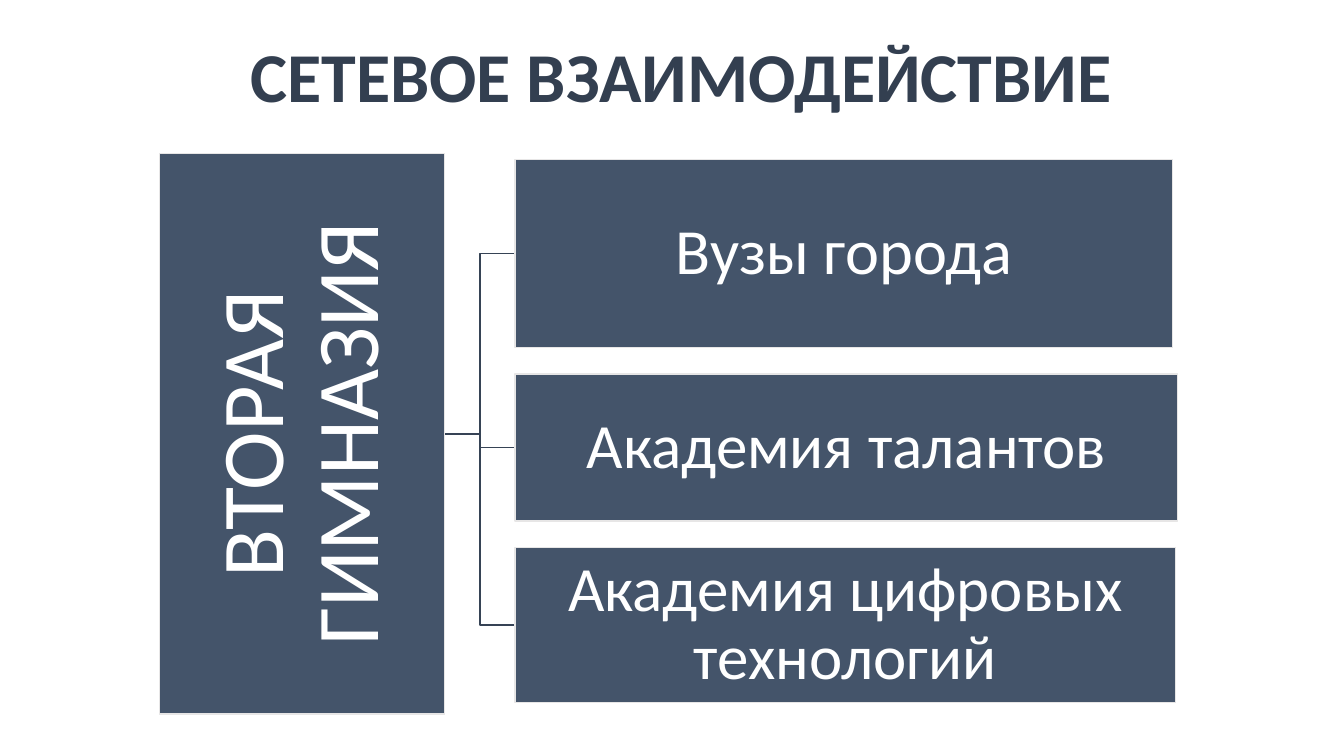
from pptx import Presentation
from pptx.dml.color import RGBColor
from pptx.enum.shapes import MSO_SHAPE
from pptx.enum.text import MSO_ANCHOR, PP_ALIGN
from pptx.util import Inches, Pt

COLORS = {
    "block": "44546A",
    "border": "E7E6E6",
    "branch": "364355",
    "title": "333F50",
    "label": "FFFFFF",
}

deck = Presentation()
deck.slide_width = Inches(13.33)
deck.slide_height = Inches(7.5)
column = deck.slide_width / 100
row = deck.slide_height / 100
slide = deck.slides.add_slide(deck.slide_layouts[5])


def write(holder, text, size, color, bold=False, inset=0.03):
    frame = holder.text_frame
    frame.word_wrap = True
    frame.vertical_anchor = MSO_ANCHOR.MIDDLE
    frame.margin_left = frame.margin_right = Inches(inset)
    frame.margin_top = frame.margin_bottom = Inches(inset)
    paragraph = frame.paragraphs[0]
    paragraph.alignment = PP_ALIGN.CENTER
    paragraph.line_spacing = 0.9
    run = paragraph.add_run()
    run.text = text
    run.font.name = "Calibri"
    run.font.size = Pt(size)
    run.font.bold = bold
    run.font.color.rgb = RGBColor.from_string(COLORS[color])


def add_block(left, top, width, height):
    block = slide.shapes.add_shape(
        MSO_SHAPE.RECTANGLE, int(left), int(top), int(width), int(height)
    )
    block.shadow.inherit = False
    block.fill.solid()
    block.fill.fore_color.rgb = RGBColor.from_string(COLORS["block"])
    block.line.color.rgb = RGBColor.from_string(COLORS["border"])
    block.line.width = Pt(1)
    return block


heading = slide.shapes.title
heading.left, heading.top = int(2.33 * column), int(0.93 * row)
heading.width, heading.height = int(96.75 * column), int(19.33 * row)
write(heading, "СЕТЕВОЕ ВЗАИМОДЕЙСТВИЕ", size=50, color="title", bold=True, inset=0.1)

school_right, school_middle = 33.1 * column, 57.4 * row
school_width, school_height = 21.23 * column, 74.13 * row
partner_left = 38.33 * column
fork = (school_right + partner_left) / 2

partners = [
    ("Вузы города", 21.07, 48.9, 24.93, 46),
    ("Академия талантов", 49.47, 49.28, 19.47, 45),
    ("Академия цифровых технологий", 72.4, 49.13, 20.53, 45),
]

for _, top, _, height, _ in partners:
    partner_middle = (top + height / 2) * row
    outline = slide.shapes.build_freeform(int(school_right), int(school_middle))
    outline.add_line_segments(
        [
            (int(fork), int(school_middle)),
            (int(fork), int(partner_middle)),
            (int(partner_left), int(partner_middle)),
        ],
        close=False,
    )
    branch = outline.convert_to_shape()
    branch.shadow.inherit = False
    branch.fill.background()
    branch.line.color.rgb = RGBColor.from_string(COLORS["branch"])
    branch.line.width = Pt(1)

school = add_block(
    school_right - (school_width + school_height) / 2,
    school_middle - school_width / 2,
    school_height,
    school_width,
)
school.rotation = 270
write(school, "ВТОРАЯ ГИМНАЗИЯ", size=63, color="label", inset=0.04)

for name, top, width, height, size in partners:
    partner = add_block(partner_left, top * row, width * column, height * row)
    write(partner, name, size=size, color="label")

deck.save("out.pptx")
